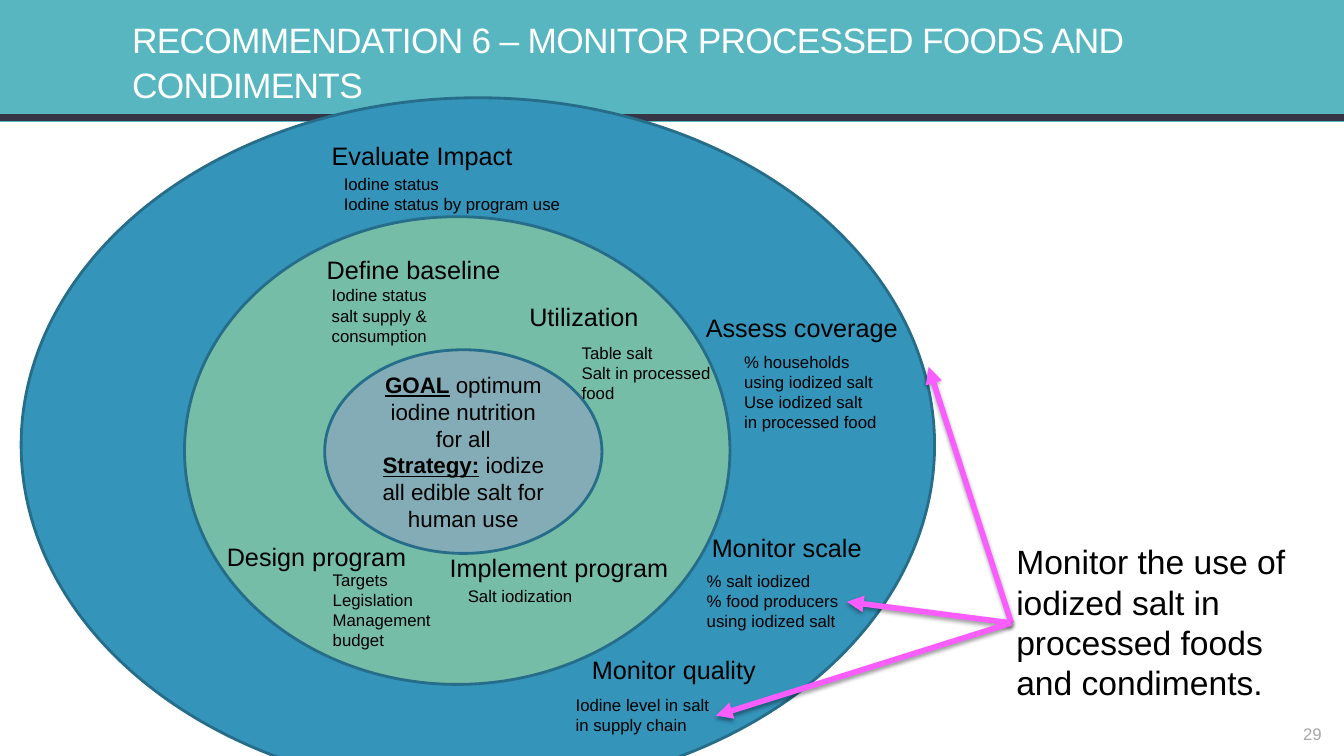
from lxml import etree
from pptx import Presentation
from pptx.dml.color import RGBColor
from pptx.enum.shapes import MSO_CONNECTOR, MSO_SHAPE
from pptx.enum.text import MSO_ANCHOR, PP_ALIGN
from pptx.oxml import parse_xml
from pptx.oxml.ns import nsdecls, qn
from pptx.util import Inches, Pt

COLORS = {
    "banner": "58B6C0", "rule": "373545", "outer": "3494BA",
    "middle": "75BDA7", "core": "84ACB6", "outline": "266D8A",
    "arrow": "FA5DFF", "black": "000000", "white": "FFFFFF", "grey": "A7A7A7",
}

# Heading, its left, top, width; detail lines, their left, top, width, height
STEPS = [
    ("Define baseline", (3.19, 2.47, 2.23),
     ["Iodine status", "salt supply & consumption"], (3.24, 2.78, 1.66, 0.71)),
    ("Design program", (2.2, 5.32, 1.97),
     ["Targets", "Legislation", "Management", "budget"], (3.25, 5.6, 1.44, 0.91)),
    ("Implement program", (4.41, 5.43, 2.39),
     ["Salt iodization"], (4.59, 5.76, 1.44, 0.3)),
    ("Utilization", (5.2, 2.94, 1.97),
     ["Table salt", "Salt in processed food"], (5.72, 3.35, 1.44, 0.71)),
    ("Monitor scale", (7.01, 5.23, 1.66),
     ["% salt iodized", "% food producers using iodized salt"],
     (6.96, 5.61, 1.44, 0.71)),
    ("Monitor quality", (5.82, 6.44, 2.11),
     ["Iodine level in salt in supply chain"], (5.66, 6.84, 1.44, 0.5)),
    ("Assess coverage", (6.95, 3.05, 2.19),
     ["% households using iodized salt", "Use iodized salt in processed food"],
     (7.33, 3.44, 1.44, 0.91)),
    ("Evaluate Impact", (3.24, 1.34, 2.07),
     ["Iodine status", "Iodine status by program use"],
     (3.36, 1.67, 2.46, 0.5)),
]
HEADING_HEIGHT = 0.4

GOAL = [("GOAL", " optimum iodine nutrition for all"),
        ("Strategy:", " iodize all edible salt for human use")]

ARROW_TIPS = [(9.21, 3.64), (8.4, 5.97), (7.1, 7.1)]


def rgb(color):
    return RGBColor.from_string(COLORS[color])


def set_attributes(target, **formats):
    for attribute, value in formats.items():
        setattr(target, attribute, value)


def format_font(font, size, color="black", **formats):
    set_attributes(font, name="Arial", size=Pt(size), **formats)
    font.color.rgb = rgb(color)


def add_text(slide, box, lines, size, color="black", inset=0.05,
             align=PP_ALIGN.LEFT, spacing=None, **frame_formats):
    label = slide.shapes.add_textbox(*map(Inches, box))
    frame = label.text_frame
    sides = ("margin_left", "margin_top", "margin_right", "margin_bottom")
    margins = dict.fromkeys(sides, Inches(inset))
    set_attributes(frame, **{"word_wrap": True, **margins, **frame_formats})
    frame.text = "\n".join(lines)
    for paragraph in frame.paragraphs:
        set_attributes(paragraph, alignment=align, line_spacing=spacing)
        for run in paragraph.runs:
            format_font(run.font, size, color)
    return label


def add_filled(slide, preset, box, fill, outline=None):
    shape = slide.shapes.add_shape(preset, *map(Inches, box))
    shape.shadow.inherit = False
    shape.fill.solid()
    shape.fill.fore_color.rgb = rgb(fill)
    if outline:
        shape.line.color.rgb = rgb(outline)
        shape.line.width = Pt(2)
    else:
        shape.line.fill.background()
    return shape


def add_line(slide, start, end, color, width):
    line = slide.shapes.add_connector(
        MSO_CONNECTOR.STRAIGHT, *map(Inches, (*start, *end)))
    line.line.color.rgb = rgb(color)
    line.line.width = Pt(width)
    effects = etree.SubElement(line._element.spPr, qn("a:effectLst"))
    return line, effects


def add_arrow(slide, callout, start, tip):
    """Draw a softly shadowed arrow from the callout's left side to tip."""
    arrow, effects = add_line(slide, start, tip, "arrow", 4)
    arrow.begin_connect(callout, 1)
    etree.SubElement(arrow.line._get_or_add_ln(), qn("a:tailEnd"), type="triangle")
    effects.append(parse_xml(
        f'<a:outerShdw {nsdecls("a")} blurRad="{Pt(3)}" dist="{Pt(1.6)}" '
        f'dir="5400000" rotWithShape="0"><a:srgbClr val="{COLORS["black"]}">'
        '<a:alpha val="38000"/></a:srgbClr></a:outerShdw>'))


def add_goal(core):
    frame = core.text_frame
    set_attributes(frame, word_wrap=True, vertical_anchor=MSO_ANCHOR.MIDDLE)
    for index, (keyword, statement) in enumerate(GOAL):
        paragraph = frame.add_paragraph() if index else frame.paragraphs[0]
        paragraph.alignment = PP_ALIGN.CENTER
        for text, strong in ((keyword, True), (statement, False)):
            run = paragraph.add_run()
            run.text = text
            format_font(run.font, 16, bold=strong, underline=strong)


def add_title(slide):
    title = add_text(
        slide, (1.31, 0.22, 11.58, 0.83),
        ["RECOMMENDATION 6 – MONITOR PROCESSED FOODS AND CONDIMENTS"],
        25.2, "white", inset=0, spacing=1.06, vertical_anchor=MSO_ANCHOR.BOTTOM)
    run = title.text_frame.paragraphs[0].runs[0]
    run.font._element.set("spc", "-50")


def main():
    presentation = Presentation()
    presentation.slide_width = Inches(13.33)
    presentation.slide_height = Inches(7.5)
    slide = presentation.slides.add_slide(presentation.slide_layouts[6])

    add_filled(slide, MSO_SHAPE.RECTANGLE, (0, 0, 13.33, 1.21), "banner")
    add_line(slide, (0, 1.17), (13.33, 1.17), "rule", 5)
    callout = add_text(
        slide, (10.03, 5.32, 3.13, 1.72),
        ["Monitor the use of iodized salt in processed foods and condiments."], 24)

    for box, fill in (((0.21, 0.97, 9.06, 6.89), "outer"),
                      ((1.83, 2.15, 5.41, 4.64), "middle"),
                      ((3.22, 3.47, 2.75, 2.02), "core")):
        ring = add_filled(slide, MSO_SHAPE.OVAL, box, fill, "outline")
    add_goal(ring)

    for heading, heading_box, details, details_box in STEPS:
        add_text(slide, (*heading_box, HEADING_HEIGHT), [heading], 18)
        add_text(slide, details_box, details, 12)
    for tip in ARROW_TIPS:
        add_arrow(slide, callout, (10.03, 6.18), tip)

    add_title(slide)
    add_text(slide, (12.87, 7.13, 0.29, 0.3), ["29"], 12, "grey",
             align=PP_ALIGN.RIGHT, word_wrap=False,
             vertical_anchor=MSO_ANCHOR.MIDDLE)
    presentation.save("out.pptx")


if __name__ == "__main__":
    main()
